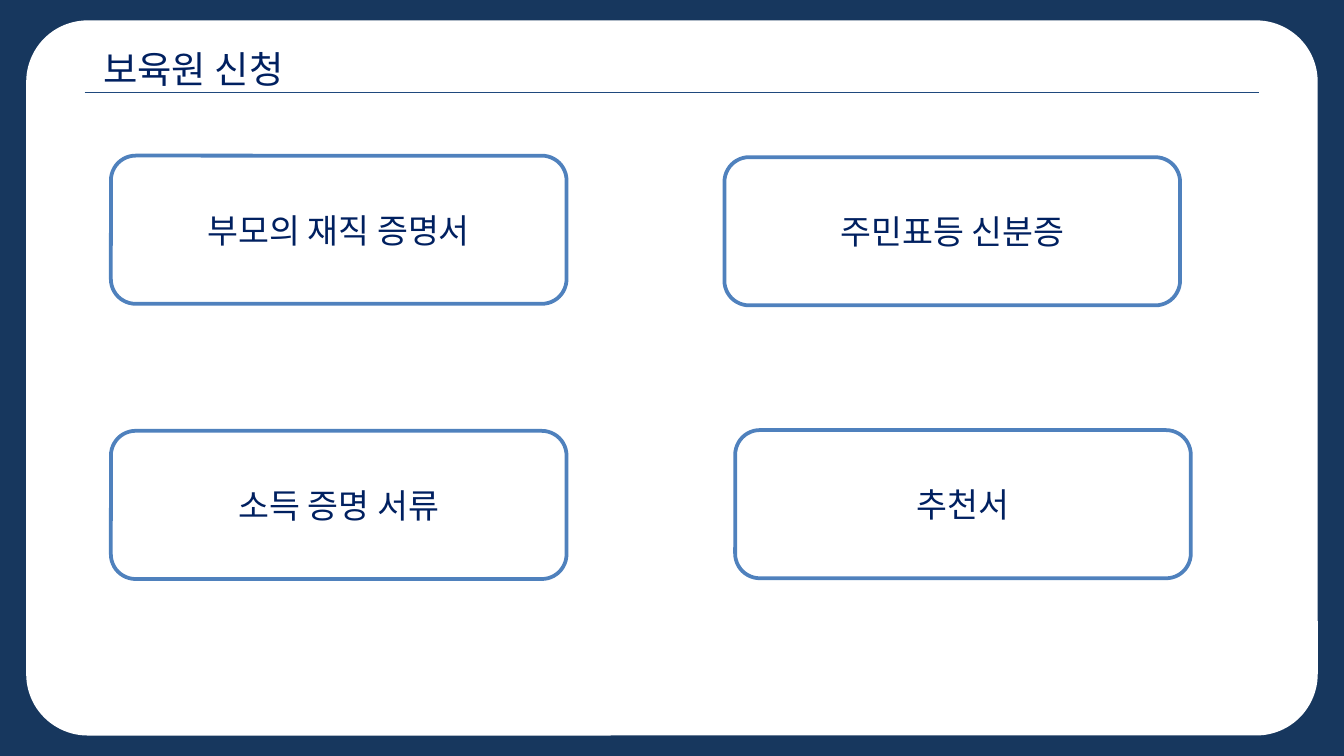
from lxml.etree import SubElement
from pptx import Presentation
from pptx.dml.color import RGBColor
from pptx.enum.shapes import MSO_CONNECTOR, MSO_SHAPE
from pptx.enum.text import MSO_ANCHOR, MSO_AUTO_SIZE, PP_ALIGN
from pptx.oxml.ns import qn
from pptx.util import Inches, Pt

THEME = {
    "font": "Noto Sans CJK KR",
    "navy": RGBColor.from_string("17375E"),
    "white": RGBColor.from_string("FFFFFF"),
    "rule": RGBColor.from_string("1F497D"),
    "border": RGBColor.from_string("4F81BD"),
    "text": RGBColor.from_string("002060"),
    "title_size": Pt(20),
    "card_size": Pt(18),
}

prs = Presentation()
prs.slide_width = Inches(10)
prs.slide_height = prs.slide_width * 9 // 16
COL, ROW = prs.slide_width / 100, prs.slide_height / 100
s = prs.slides.add_slide(prs.slide_layouts[6])
s.background.fill.solid()
s.background.fill.fore_color.rgb = THEME["navy"]


def add_panel(x, y, w, h):
    """Add a white rounded rectangle, placed in hundredths of the slide."""
    sp = s.shapes.add_shape(MSO_SHAPE.ROUNDED_RECTANGLE,
                            int(x * COL), int(y * ROW), int(w * COL), int(h * ROW))
    sp.shadow.inherit = False
    sp.fill.solid()
    sp.fill.fore_color.rgb = THEME["white"]
    return sp


def write(tf, text, size, frame_format, align):
    for name, value in frame_format.items():
        setattr(tf, name, value)
    p = tf.paragraphs[0]
    p.alignment = align
    r = p.add_run()
    r.text = text
    for name, value in {"name": THEME["font"], "size": size}.items():
        setattr(r.font, name, value)
    r.font.color.rgb = THEME["text"]
    # Hangul takes its typeface from the East Asian font slot
    SubElement(r.font._element, qn("a:ea"), typeface=THEME["font"])


# White page on the navy background
page = add_panel(1.95, 2.7, 96.1, 94.6)
page.adjustments[0] = 0.086
page.line.fill.background()

# Title and the rule below it
rule_y = int(12.27 * ROW)
rule = s.shapes.add_connector(MSO_CONNECTOR.STRAIGHT,
                              int(6.3 * COL), rule_y, int(93.7 * COL), rule_y)
rule.line.color.rgb = THEME["rule"]
rule.line.width = Pt(0.75)
SubElement(rule._element.spPr, qn("a:effectLst"))

title = s.shapes.add_textbox(int(6.7 * COL), int(5.2 * ROW), int(35.4 * COL), int(7.8 * ROW))
write(title.text_frame, "보육원 신청", THEME["title_size"],
      {"word_wrap": True, "auto_size": MSO_AUTO_SIZE.SHAPE_TO_FIT_TEXT}, PP_ALIGN.LEFT)

# Required documents: left, top and label of each card
CARDS = [
    (8.25, 20.6, "부모의 재직 증명서"),
    (8.25, 57, "소득 증명 서류"),
    (53.9, 20.8, "주민표등 신분증"),
    (54.7, 56.9, "추천서"),
]
for x, y, label in CARDS:
    card = add_panel(x, y, 33.9, 19.6)
    card.line.color.rgb = THEME["border"]
    card.line.width = Pt(2)
    write(card.text_frame, label, THEME["card_size"],
          {"word_wrap": True, "vertical_anchor": MSO_ANCHOR.MIDDLE}, PP_ALIGN.CENTER)

prs.save("out.pptx")
